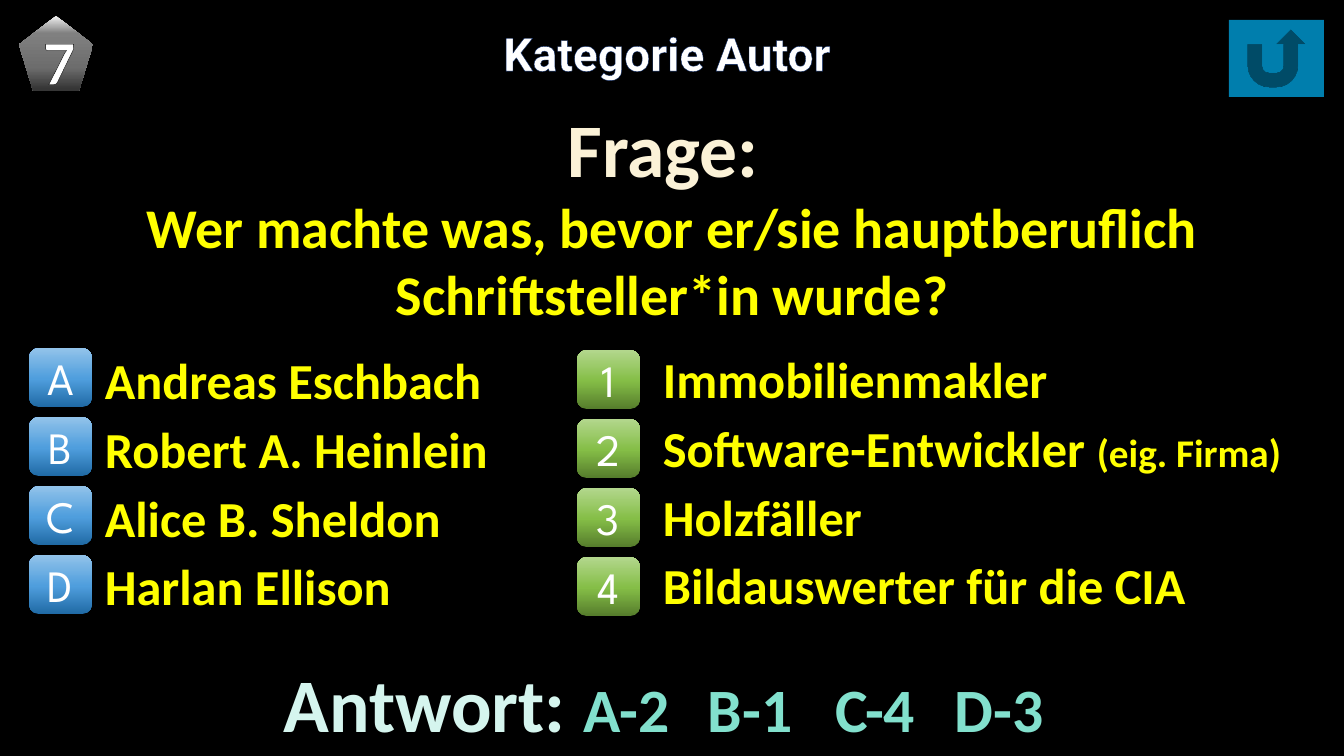
from lxml import etree
from pptx import Presentation
from pptx.dml.color import RGBColor
from pptx.enum.shapes import MSO_SHAPE
from pptx.enum.text import MSO_ANCHOR, MSO_AUTO_SIZE, PP_ALIGN
from pptx.oxml.ns import qn
from pptx.util import Emu, Pt

LEFT, CENTER = PP_ALIGN.LEFT, PP_ALIGN.CENTER
MIDDLE, GROW = MSO_ANCHOR.MIDDLE, MSO_AUTO_SIZE.SHAPE_TO_FIT_TEXT
BADGE, PENTAGON = MSO_SHAPE.ROUNDED_RECTANGLE, MSO_SHAPE.REGULAR_PENTAGON
RETURN_BUTTON = MSO_SHAPE.ACTION_BUTTON_RETURN

BLACK = RGBColor(0x00, 0x00, 0x00)
WHITE = RGBColor(0xFF, 0xFF, 0xFF)
NAVY = RGBColor(0x00, 0x20, 0x60)
YELLOW = RGBColor(0xFF, 0xFF, 0x00)
CREAM = RGBColor(0xFB, 0xF2, 0xD7)
PALE_MINT = RGBColor(0xD5, 0xF5, 0xEE)
MINT = RGBColor(0x82, 0xE0, 0xCD)
CYAN = RGBColor(0x00, 0xB0, 0xF0)
# Gradients: (position in percent, colour)
BLUES = [(0, RGBColor(0x20, 0x6A, 0xA5)), (48, RGBColor(0x4F, 0x9E, 0xDD)),
         (100, RGBColor(0x92, 0xC3, 0xEA))]
GREENS = [(0, RGBColor(0x56, 0x7D, 0x2C)), (48, RGBColor(0x85, 0xBE, 0x47)),
          (100, RGBColor(0xB3, 0xD7, 0x8D))]
GREYS = [(0, RGBColor(0xF2, 0xF2, 0xF2)), (23, RGBColor(0x80, 0x80, 0x80)),
         (69, RGBColor(0x6D, 0x6D, 0x6D)), (97, RGBColor(0x36, 0x36, 0x36))]
UPWARD, DOWNWARD = 90, 270

# Content: each paragraph is a list of (text, points, colour) runs
CATEGORY = "Kategorie Autor"
CARD_NUMBER = "7"
QUESTION = [
    [("Frage: ", 54, CREAM)],
    [("Wer machte was, bevor er/sie hauptberuflich Schriftsteller*in wurde?", 40, YELLOW)],
]
AUTHORS = [[(name, 36, YELLOW)] for name in (
    "Andreas Eschbach", "Robert A. Heinlein", "Alice B. Sheldon", "Harlan Ellison")]
JOBS = [
    [("Immobilienmakler", 36, YELLOW)],
    [("Software-Entwickler ", 36, YELLOW), ("(eig. Firma)", 28, YELLOW)],
    [("Holzfäller", 36, YELLOW)],
    [("Bildauswerter für die CIA", 36, YELLOW)],
]
SOLUTION = [[("Antwort: ", 54, PALE_MINT), ("A-2\tB-1\tC-4\tD-3", 44, MINT)]]
SOLUTION_INSET = 257
SOLUTION_TABS = (424, 552, 671)

# Badge columns: labels, gradient, left, top of the first badge
BADGE_COLUMNS = [("ABCD", BLUES, 29, 348), ("1234", GREENS, 577, 350)]
BADGE_W, BADGE_H, BADGE_PITCH = 63, 59, 69


def px(length):
    return Emu(round(length * 914400 / 100.8))


def add_run(paragraph, text, size, color, font="Calibri", bold=True, outline=None):
    run = paragraph.add_run()
    run.text = text
    run.font.size, run.font.name, run.font.bold = Pt(size), font, bold
    run.font.color.rgb = color
    if outline:
        line_color, width = outline
        line = etree.Element(qn("a:ln"), w=str(Pt(width)))
        fill = etree.SubElement(line, qn("a:solidFill"))
        etree.SubElement(fill, qn("a:srgbClr"), val=str(line_color))
        run.font._element.insert(0, line)


def add_text(box, paragraphs, align=LEFT, space_after=0, **style):
    frame = slide.shapes.add_textbox(*map(px, box)).text_frame
    frame.word_wrap, frame.auto_size = True, GROW
    for i, runs in enumerate(paragraphs):
        paragraph = frame.add_paragraph() if i else frame.paragraphs[0]
        paragraph.alignment = align
        paragraph.space_after = Pt(space_after)
        for run in runs:
            add_run(paragraph, *run, **style)
    return frame


def add_plain_shape(kind, box):
    shape = slide.shapes.add_shape(kind, *map(px, box))
    shape.shadow.inherit = False
    shape.line.fill.background()
    return shape


def add_sign(kind, box, stops, angle, label, size, **style):
    shape = add_plain_shape(kind, box)
    shape.fill.gradient()
    shape.fill.gradient_angle = angle
    stop_list = shape._element.spPr.find(".//" + qn("a:gsLst"))
    for old in list(stop_list):
        stop_list.remove(old)
    for position, color in stops:
        stop = etree.SubElement(stop_list, qn("a:gs"), pos=str(position * 1000))
        etree.SubElement(stop, qn("a:srgbClr"), val=str(color))
    shape.text_frame.vertical_anchor = MIDDLE
    paragraph = shape.text_frame.paragraphs[0]
    paragraph.alignment = CENTER
    add_run(paragraph, label, size, WHITE, **style)


prs = Presentation()
prs.slide_width, prs.slide_height = px(1344), px(756)
slide = prs.slides.add_slide(prs.slide_layouts[6])
slide.background.fill.solid()
slide.background.fill.fore_color.rgb = BLACK

# Header and question
add_text((27, 20, 1280, 67), [[(CATEGORY, 33, WHITE)]], CENTER,
         font="Roboto", outline=(NAVY, 0.52))
add_text((0, 97, 1344, 238), QUESTION, CENTER)

# Solution, its pairs set on tab stops
solution = add_text((27, 652, 1280, 102), SOLUTION)
solution.margin_left = px(SOLUTION_INSET)
tabs = etree.SubElement(solution.paragraphs[0]._p.get_or_add_pPr(), qn("a:tabLst"))
for stop in SOLUTION_TABS:
    etree.SubElement(tabs, qn("a:tab"), pos=str(px(stop)), algn="l")

# Return button
button = add_plain_shape(RETURN_BUTTON, (1229, 20, 95, 77))
button.fill.solid()
button.fill.fore_color.rgb = CYAN
button_color = button._element.spPr.find(qn("a:solidFill")).find(qn("a:srgbClr"))
etree.SubElement(button_color, qn("a:alpha"), val="72000")

# Card number
add_sign(PENTAGON, (19, 16, 74, 75), GREYS, DOWNWARD, CARD_NUMBER, 40,
         font="Lato", outline=(BLACK, 1.06))

# Authors and jobs to be matched
add_text((653, 343, 691, 280), JOBS, space_after=6)
add_text((95, 344, 444, 280), AUTHORS, space_after=6)
for labels, stops, left, top in BADGE_COLUMNS:
    for row, label in enumerate(labels):
        add_sign(BADGE, (left, top + row * BADGE_PITCH, BADGE_W, BADGE_H), stops,
                 UPWARD, label, 32, font="League Spartan", bold=False)

prs.save("out.pptx")
